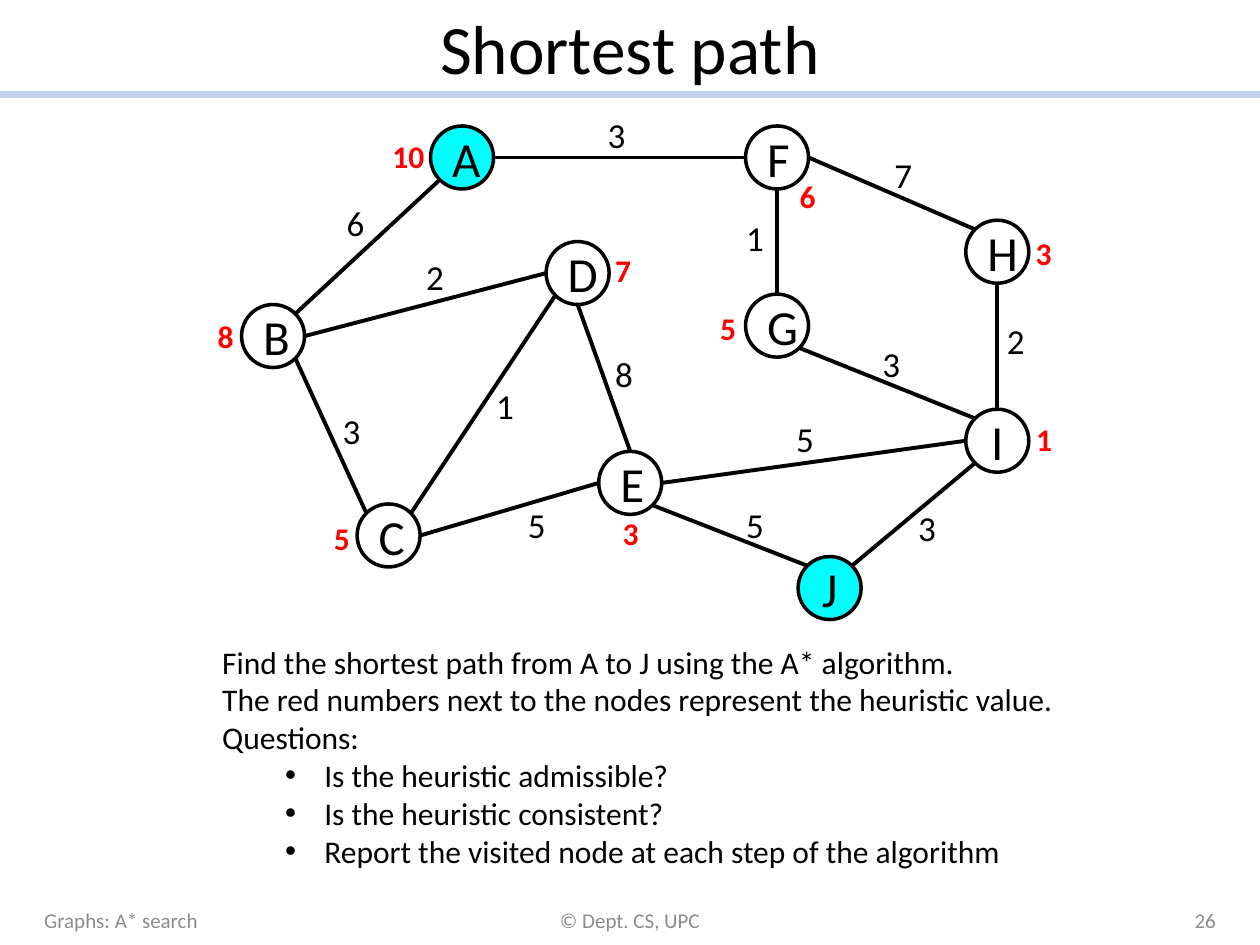
import math

import pptx
import pptx.dml.color
import pptx.enum.shapes
import pptx.enum.text
import pptx.oxml.ns
import pptx.util
from lxml import etree

Cm, Pt = pptx.util.Cm, pptx.util.Pt
ALIGN = pptx.enum.text.PP_ALIGN
ANCHOR = pptx.enum.text.MSO_ANCHOR

BLACK, RED, GREY, CYAN, BLUE = "000000", "FF0000", "8C8C8C", "00FFFF", "C2D1ED"
NODE_SIZE = 1.27

# name: left, top, fill, heuristic (text, left, top)
NODES = {
    "A": (8.68, 2.54, CYAN, ("10", 7.66, 2.64)),
    "B": (4.87, 6.14, None, ("8", 4.14, 6.26)),
    "C": (7.2, 10.16, None, ("5", 6.48, 10.34)),
    "D": (11.01, 4.87, None, ("7", 12.15, 4.93)),
    "E": (12.07, 9.1, None, ("3", 12.3, 10.24)),
    "F": (15.03, 2.54, None, ("6", 15.87, 3.45)),
    "G": (15.03, 5.93, None, ("5", 14.27, 6.11)),
    "H": (19.47, 4.44, None, ("3", 20.63, 4.6)),
    "I": (19.47, 8.25, None, ("1", 20.64, 8.34)),
    "J": (16.09, 11.22, CYAN, None),
}

# start node, side, end node, side, weight, weight left, weight top
EDGES = [
    ("A", "SW", "B", "NE", "6", 6.74, 3.94),
    ("F", "W", "A", "E", "3", 12.0, 2.16),
    ("B", "SE", "C", "NW", "3", 6.66, 8.13),
    ("B", "E", "D", "W", "2", 8.34, 5.03),
    ("D", "SW", "C", "NE", "1", 9.75, 7.62),
    ("D", "S", "E", "N", "8", 12.15, 6.98),
    ("C", "E", "E", "W", "5", 10.39, 10.02),
    ("E", "SE", "J", "NW", "5", 14.79, 10.02),
    ("J", "NE", "I", "SW", "3", 18.26, 10.08),
    ("E", "E", "I", "W", "5", 15.8, 8.3),
    ("F", "S", "G", "N", "1", 14.79, 4.24),
    ("G", "SE", "I", "NW", "3", 17.54, 6.78),
    ("F", "E", "H", "NW", "7", 17.78, 2.97),
    ("H", "S", "I", "N", "2", 20.05, 6.32),
]

INTRO = [
    "Find the shortest path from A to J using the A* algorithm.",
    "The red numbers next to the nodes represent the heuristic value.",
    "Questions:",
]
QUESTIONS = [
    "Is the heuristic admissible?",
    "Is the heuristic consistent?",
    "Report the visited node at each step of the algorithm",
]


def rgb(color):
    return pptx.dml.color.RGBColor.from_string(color)


def side_point(node, side):
    """Point on the rim of a node in a compass direction."""
    angle = ("E", "SE", "S", "SW", "W", "NW", "N", "NE").index(side) * math.pi / 4
    left, top = NODES[node][:2]
    r = NODE_SIZE / 2
    return left + r + r * math.cos(angle), top + r + r * math.sin(angle)


class GraphSlide:
    """Holds the text style and the slide being drawn."""

    font = "Calibri"

    def __init__(self, s):
        self.s = s

    def style(self, p, size, color=BLACK, bold=False, align=ALIGN.LEFT):
        p.alignment = align
        p.font.name, p.font.size, p.font.bold = self.font, Pt(size), bold
        p.font.color.rgb = rgb(color)

    def text(self, lines, left, top, width, height, size, wrap=True,
             anchor=ANCHOR.TOP, **style):
        sp = self.s.shapes.add_textbox(Cm(left), Cm(top), Cm(width), Cm(height))
        tf = sp.text_frame
        tf.word_wrap, tf.vertical_anchor = wrap, anchor
        if not wrap:
            tf.auto_size = pptx.enum.text.MSO_AUTO_SIZE.SHAPE_TO_FIT_TEXT
        tf.text = "\n".join(lines)
        for p in tf.paragraphs:
            self.style(p, size, **style)
        return tf

    def bullet(self, p):
        p.level = 1
        pPr = p._p.get_or_add_pPr()
        pPr.set("marL", str(Cm(2.06)))
        pPr.set("indent", str(Cm(-0.79)))
        for tag, key, value in (("a:buFont", "typeface", "Arial"),
                                ("a:buChar", "char", "•")):
            bu = etree.Element(pptx.oxml.ns.qn(tag))
            bu.set(key, value)
            pPr.insert_element_before(bu, "a:tabLst", "a:defRPr", "a:extLst")

    def line(self, start, end, color=BLACK, width=2.25):
        cx = self.s.shapes.add_connector(
            pptx.enum.shapes.MSO_CONNECTOR.STRAIGHT,
            *(Cm(v) for v in (*start, *end)))
        cx.line.color.rgb, cx.line.width = rgb(color), Pt(width)
        etree.SubElement(cx._element.spPr, pptx.oxml.ns.qn("a:effectLst"))

    def node(self, name, left, top, fill):
        sp = self.s.shapes.add_shape(
            pptx.enum.shapes.MSO_SHAPE.OVAL,
            Cm(left), Cm(top), Cm(NODE_SIZE), Cm(NODE_SIZE))
        sp.shadow.inherit = False
        if fill:
            sp.fill.solid()
            sp.fill.fore_color.rgb = rgb(fill)
        else:
            sp.fill.background()
        sp.line.color.rgb, sp.line.width = rgb(BLACK), Pt(2)
        tf = sp.text_frame
        tf.text, tf.vertical_anchor = name, ANCHOR.MIDDLE
        self.style(tf.paragraphs[0], 28, align=ALIGN.CENTER)


def main():
    prs = pptx.Presentation()
    prs.slide_width, prs.slide_height = Cm(25.4), Cm(19.05)
    g = GraphSlide(prs.slides.add_slide(prs.slide_layouts[6]))

    g.line((0, 1.9), (25.4, 1.9), BLUE, 4)
    g.text(["Shortest path"], 1.27, 0, 22.86, 1.9, 39.6,
           anchor=ANCHOR.MIDDLE, align=ALIGN.CENTER)
    for footer, left, width, align in (
            ("Graphs: A* search", 0.64, 5.92, ALIGN.LEFT),
            ("© Dept. CS, UPC", 8.68, 8.04, ALIGN.CENTER),
            ("26", 18.84, 5.92, ALIGN.RIGHT)):
        g.text([footer], left, 18.03, width, 1.02, 12,
               anchor=ANCHOR.MIDDLE, color=GREY, align=align)

    for name, (left, top, fill, _) in NODES.items():
        g.node(name, left, top, fill)
    for start, side, end, end_side, weight, left, top in EDGES:
        g.line(side_point(start, side), side_point(end, end_side))
        g.text([weight], left, top, 0.86, 1.11, 20, wrap=False)
    for *_, heuristic in NODES.values():
        if heuristic:
            value, left, top = heuristic
            g.text([value], left, top, 0.51 + 0.33 * len(value), 1.03, 18,
                   wrap=False, color=RED, bold=True)

    tf = g.text(INTRO + QUESTIONS, 4.23, 12.83, 17.48, 4.88, 18, wrap=False)
    for p in tf.paragraphs[len(INTRO):]:
        g.bullet(p)

    prs.save("out.pptx")


if __name__ == "__main__":
    main()
